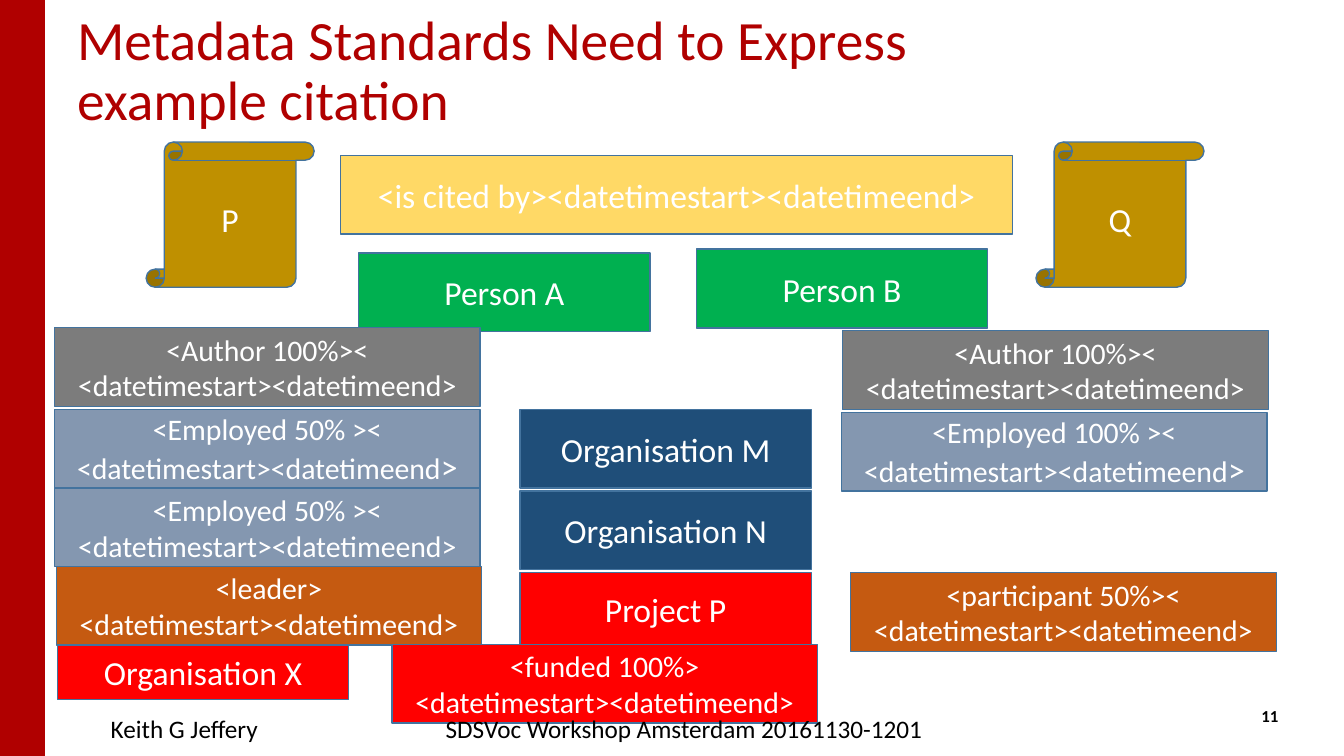
from pptx import Presentation
from pptx.dml.color import RGBColor
from pptx.enum.shapes import MSO_SHAPE
from pptx.enum.text import MSO_ANCHOR, PP_ALIGN
from pptx.util import Pt

RECT, SCROLL = MSO_SHAPE.RECTANGLE, MSO_SHAPE.VERTICAL_SCROLL
TOP, MIDDLE = MSO_ANCHOR.TOP, MSO_ANCHOR.MIDDLE
LEFT, CENTER, RIGHT = PP_ALIGN.LEFT, PP_ALIGN.CENTER, PP_ALIGN.RIGHT

CRIMSON, RED, GREEN, NAVY = "B00000", "FF0000", "00B050", "1F4E79"
GOLD, YELLOW, GREY, STEEL, RUST = "BF9000", "FFD966", "7C7C7C", "8497B0", "C55A11"
WHITE, BLACK, EDGE = "FFFFFF", "000000", "43739E"

SPAN = "<datetimestart><datetimeend>"
BIG, SMALL = 24, 21.3
HIGH = 56.2     # height of most boxes
THING = 208     # width of a person, organisation or project box
LINK = 304      # width of a relation box
MID = 371.5     # left edge of the middle column


def color(code):
    return RGBColor.from_string(code)


class Board:
    font = "Calibri"

    def __init__(self, slide):
        self.shapes = slide.shapes

    def fill_text(self, shape, text, size, ink, align, anchor, bold=False):
        frame = shape.text_frame
        frame.word_wrap = True
        frame.vertical_anchor = anchor
        para = frame.paragraphs[0]
        para.text = text
        para.alignment = align
        para.font.name = self.font
        para.font.size = Pt(size)
        para.font.bold = bold
        para.font.color.rgb = color(ink)
        return para

    def block(self, x, y, w, h, fill, edge=EDGE, kind=RECT):
        shape = self.shapes.add_shape(kind, Pt(x), Pt(y), Pt(w), Pt(h))
        shape.shadow.inherit = False
        shape.fill.solid()
        shape.fill.fore_color.rgb = color(fill)
        shape.line.color.rgb = color(edge)
        shape.line.width = Pt(1)
        return shape

    def box(self, text, x, y, w, h, fill, size=BIG, kind=RECT):
        shape = self.block(x, y, w, h, fill, kind=kind)
        return self.fill_text(shape, text, size, WHITE, CENTER, MIDDLE)

    def thing(self, text, x, y, fill, h=HIGH):
        self.box(text, x, y, THING, h, fill)

    def link(self, role, x, y, fill, tail=""):
        """Draw a relation box; tail is a larger ending for its text."""
        text = (role + " " + SPAN).removesuffix(tail)
        para = self.box(text, x, y, LINK, HIGH, fill, SMALL)
        if tail:
            run = para.add_run()
            run.text = tail
            run.font.size = Pt(BIG)

    def label(self, text, x, y, w, h, size, ink=BLACK, align=LEFT,
              anchor=TOP, bold=False):
        shape = self.shapes.add_textbox(Pt(x), Pt(y), Pt(w), Pt(h))
        return self.fill_text(shape, text, size, ink, align, anchor, bold)


def main():
    deck = Presentation()
    deck.slide_width, deck.slide_height = Pt(960), Pt(540)
    board = Board(deck.slides.add_slide(deck.slide_layouts[6]))

    board.block(0, 0, 32, 540, CRIMSON, CRIMSON)
    title = board.label("Metadata Standards Need to Express\vexample citation",
                        48, 21.6, 864, 60.5, 39.6, CRIMSON, anchor=MIDDLE)
    title.line_spacing = 0.9

    for name, x in (("P", 104.4), ("Q", 740)):
        board.box(name, x, 101.5, 120, 103.7, GOLD, kind=SCROLL)
    board.box("<is cited by>" + SPAN, 243.2, 111, 480, HIGH, YELLOW)

    board.thing("Project P", MID, 409, RED, 51.8)
    board.thing("Organisation N", MID, 350.6, NAVY)
    board.thing("Organisation M", MID, 292.3, NAVY)
    board.thing("Person A", 256.3, 180.6, GREEN)
    board.thing("Person B", 497.5, 178, GREEN)

    board.link("<Employed 50% ><", 39, 292.3, STEEL, ">")
    board.link("<Employed 50% ><", 39, 348.5, STEEL)
    board.link("<Author 100%><", 39, 234, GREY)
    board.link("<Employed 100% ><", 601.2, 294.5, STEEL, ">")
    board.link("<Author 100%><", 602, 236.2, GREY)
    board.link("<leader>", 40.2, 404.6, RUST)
    board.link("<participant 50%><", 607.7, 409, RUST)
    board.thing("Organisation X", 41, 460.8, RED, 38.9)
    board.link("<funded 100%>", 280, 460.2, RED)

    board.label("Keith G Jeffery", 72, 506.2, 255, 28.8, 18)
    board.label("SDSVoc Workshop Amsterdam 20161130-1201",
                165.6, 506.2, 646, 28.8, 18, align=CENTER)
    board.label("11", 797.8, 496.8, 122.4, 28.8, 12,
                align=RIGHT, anchor=MIDDLE, bold=True)
    deck.save("out.pptx")


if __name__ == "__main__":
    main()
